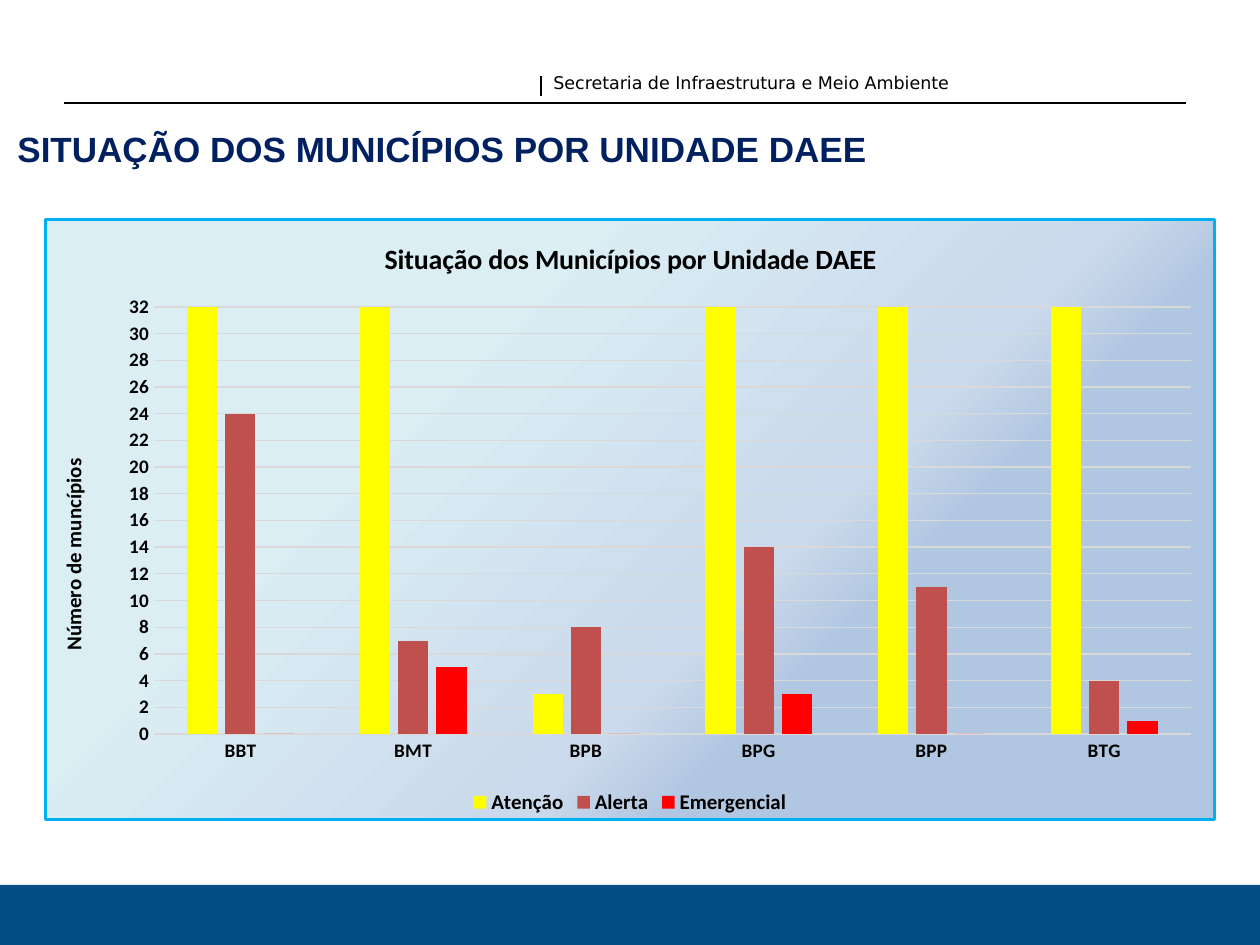
from lxml import etree
from pptx import Presentation
from pptx.chart.data import CategoryChartData
from pptx.dml.color import RGBColor
from pptx.enum.chart import XL_CHART_TYPE, XL_LEGEND_POSITION, XL_TICK_MARK
from pptx.enum.shapes import MSO_CONNECTOR, MSO_SHAPE
from pptx.enum.text import MSO_ANCHOR, PP_ALIGN
from pptx.oxml import parse_xml
from pptx.oxml.ns import nsdecls, qn
from pptx.util import Emu, Pt

COLUMNS = XL_CHART_TYPE.COLUMN_CLUSTERED
BOTTOM = XL_LEGEND_POSITION.BOTTOM
NO_TICK = XL_TICK_MARK.NONE
STRAIGHT = MSO_CONNECTOR.STRAIGHT
RECTANGLE = MSO_SHAPE.RECTANGLE
TOP, MIDDLE = MSO_ANCHOR.TOP, MSO_ANCHOR.MIDDLE
LEFT, JUSTIFY = PP_ALIGN.LEFT, PP_ALIGN.JUSTIFY

PX_PER_INCH = 126
CHART_WIDTH, CHART_HEIGHT = 1172, 603
BLACK, GREY = "000000", "D9D9D9"
AXIS_MAX = 32
CATEGORIES = ["BBT", "BMT", "BPB", "BPG", "BPP", "BTG"]
SERIES = [
    ("Atenção", [32, 32, 3, 32, 32, 32], "FFFF00"),
    ("Alerta", [24, 7, 8, 14, 11, 4], "C0504D"),
    ("Emergencial", [0, 5, 0, 3, 0, 1], "FF0000"),
]
GRADIENT = [(31, "B0C6E1"), (39, "CAD9EB"), (70, "DBEEF4")]


def px(length):
    return Emu(round(length * 914400 / PX_PER_INCH))


def color(hex_code):
    return RGBColor.from_string(hex_code)


def set_font(font, size, hex_code=BLACK, name="Calibri", bold=True):
    font.size = Pt(size)
    font.bold = bold
    font.name = name
    font.color.rgb = color(hex_code)


def add_text(page, box, text, align=LEFT, anchor=TOP, **font_format):
    frame = page.shapes.add_textbox(*map(px, box)).text_frame
    frame.word_wrap = True
    frame.vertical_anchor = anchor
    para = frame.paragraphs[0]
    para.alignment = align
    span = para.add_run()
    span.text = text
    set_font(span.font, **font_format)


def add_line(page, x1, y1, x2, y2):
    line = page.shapes.add_connector(STRAIGHT, *map(px, (x1, y1, x2, y2)))
    line.line.color.rgb = color(BLACK)
    line.line.width = Pt(0.75)
    etree.SubElement(line.element.spPr, qn("a:effectLst"))


def add_header(page, left, top, width, height):
    """Department name beside a short divider, above a full-width rule."""
    divider = left + 477
    add_line(page, left, top + height, left + width, top + height)
    add_line(page, divider, top + 10, divider, top + 30)
    add_text(page, (divider, top, 435, 34),
             "Secretaria de Infraestrutura e Meio Ambiente",
             size=10, name="DejaVu Sans", bold=False)


def add_footer(page, *box):
    band = page.shapes.add_shape(RECTANGLE, *map(px, box))
    band.shadow.inherit = False
    band.fill.solid()
    band.fill.fore_color.rgb = color("034E84")
    band.line.fill.background()


def set_layout(parent, left, top, width=0, height=0):
    """Place a chart part in px within the chart; a size marks the inner plot."""
    target = '<c:layoutTarget val="inner"/>' if width else ""
    size = (f'<c:w val="{width / CHART_WIDTH}"/><c:h val="{height / CHART_HEIGHT}"/>'
            if width else "")
    layout = parse_xml(
        f'<c:layout {nsdecls("c")}><c:manualLayout>{target}'
        '<c:xMode val="edge"/><c:yMode val="edge"/>'
        f'<c:x val="{left / CHART_WIDTH}"/><c:y val="{top / CHART_HEIGHT}"/>'
        f'{size}</c:manualLayout></c:layout>')
    previous = parent.find(qn("c:layout"))
    text = parent.find(qn("c:tx"))
    if previous is not None:
        parent.replace(previous, layout)
    elif text is not None:
        text.addnext(layout)
    else:
        parent.insert(0, layout)


def set_title(title, text, size, left, top):
    para = title.text_frame.paragraphs[0]
    span = para.add_run()
    span.text = text
    set_font(span.font, size)
    set_layout(title.element, left, top)


def set_background(chart):
    """Radial gradient from the lower right corner, with a blue border."""
    stops = "".join(
        f'<a:gs pos="{percent * 1000}"><a:srgbClr val="{hex_code}"/></a:gs>'
        for percent, hex_code in GRADIENT)
    properties = parse_xml(
        f'<c:spPr {nsdecls("c", "a")}><a:gradFill><a:gsLst>{stops}</a:gsLst>'
        '<a:path path="circle"><a:fillToRect l="100000" t="100000"/></a:path>'
        f'</a:gradFill><a:ln w="{Pt(1.5)}"><a:solidFill><a:srgbClr val="00B0F0"/>'
        '</a:solidFill></a:ln></c:spPr>')
    chart.element.find(qn("c:chart")).addnext(properties)


def style_axes(chart):
    categories, values = chart.category_axis, chart.value_axis
    for axis in (categories, values):
        axis.major_tick_mark = axis.minor_tick_mark = NO_TICK
        set_font(axis.tick_labels.font, 11)
    values.minimum_scale, values.maximum_scale, values.major_unit = 0, AXIS_MAX, 2
    values.format.line.fill.background()
    for line in (categories.format.line, values.major_gridlines.format.line):
        line.color.rgb = color(GREY)
        line.width = Pt(0.75)
    set_title(values.axis_title, "Número de muncípios", 12, 10, 237)


def add_status_chart(page, left, top):
    chart_data = CategoryChartData()
    chart_data.categories = CATEGORIES
    for name, counts, _ in SERIES:
        chart_data.add_series(name, counts)
    box = map(px, (left, top, CHART_WIDTH, CHART_HEIGHT))
    chart = page.shapes.add_chart(COLUMNS, *box, chart_data).chart
    set_font(chart.font, 10, bold=False)
    set_background(chart)
    chart.has_title = True
    set_title(chart.chart_title, "Situação dos Municípios por Unidade DAEE",
              16, 335, 16)
    style_axes(chart)
    chart.has_legend = True
    chart.legend.position = BOTTOM
    chart.legend.include_in_layout = False
    set_font(chart.legend.font, 12)
    plot = chart.plots[0]
    plot.gap_width, plot.overlap = 219, -27
    plot.vary_by_categories = False
    for series, (_, _, hex_code) in zip(plot.series, SERIES):
        series.invert_if_negative = False
        series.format.fill.solid()
        series.format.fill.fore_color.rgb = color(hex_code)
    set_layout(next(chart.element.iter(qn("c:plotArea"))), 109, 88, 1039, 429)


def main():
    deck = Presentation()
    deck.slide_width, deck.slide_height = px(1260), px(945)
    page = deck.slides.add_slide(deck.slide_layouts[6])
    add_header(page, 64, 66, 1122, 37)
    add_footer(page, 0, 885, 1260, 60)
    add_text(page, (5, 124, 1255, 49), "SITUAÇÃO DOS MUNICÍPIOS POR UNIDADE DAEE",
             align=JUSTIFY, anchor=MIDDLE, size=20, hex_code="002060", name="Arial")
    add_status_chart(page, 44, 218)
    deck.save("out.pptx")


if __name__ == "__main__":
    main()
